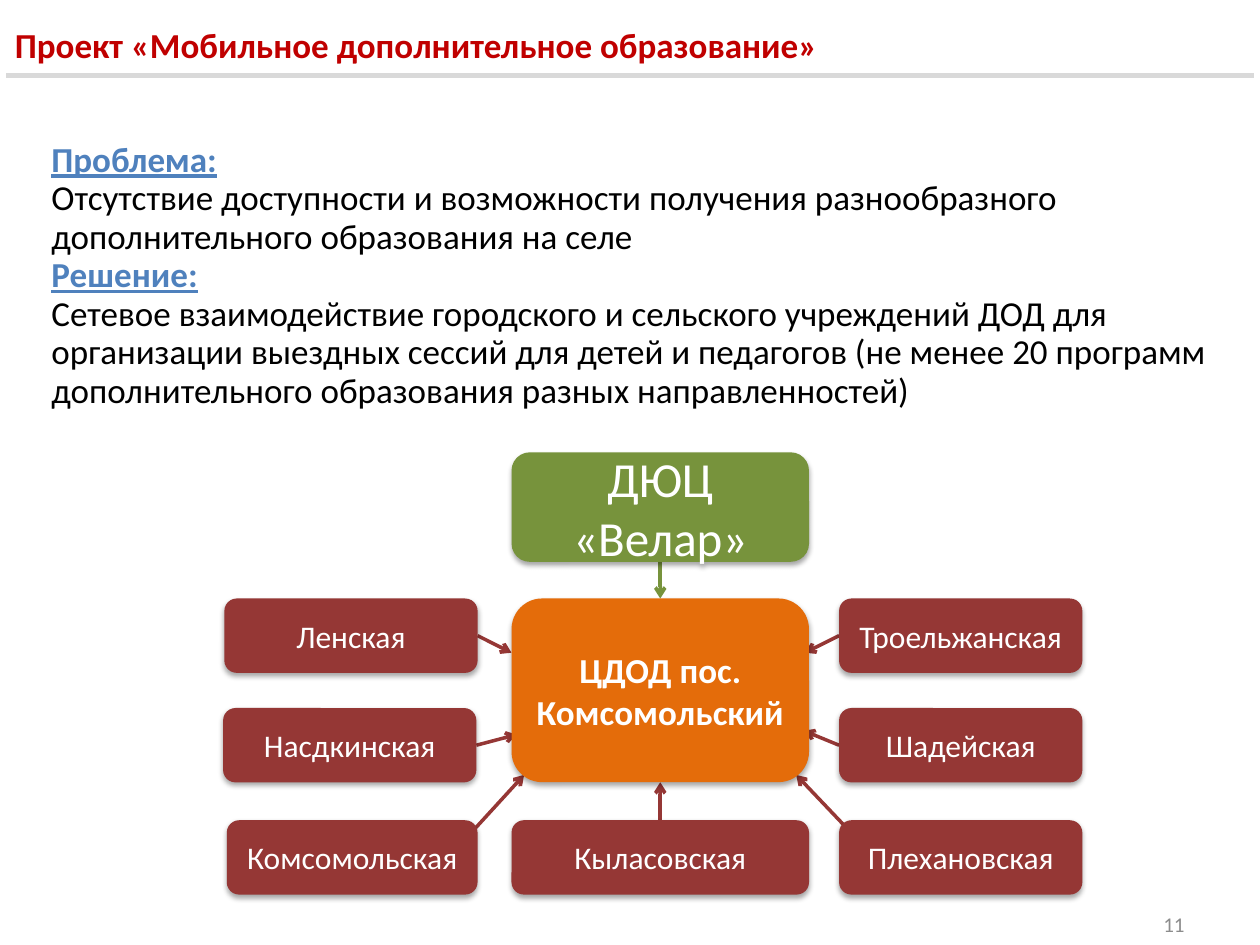
from dataclasses import dataclass

from lxml import etree
from pptx import Presentation
from pptx.dml.color import RGBColor
from pptx.enum.shapes import MSO_CONNECTOR, MSO_SHAPE
from pptx.enum.text import MSO_ANCHOR, PP_ALIGN
from pptx.oxml.ns import qn
from pptx.util import Pt

STRAIGHT = MSO_CONNECTOR.STRAIGHT
ROUNDED = MSO_SHAPE.ROUNDED_RECTANGLE
MIDDLE, TOP_ANCHOR = MSO_ANCHOR.MIDDLE, MSO_ANCHOR.TOP
LEFT_ALIGN, CENTER, RIGHT_ALIGN = PP_ALIGN.LEFT, PP_ALIGN.CENTER, PP_ALIGN.RIGHT
TOP, LEFT, BOTTOM, RIGHT = range(4)


@dataclass(frozen=True)
class Theme:
    font: str = "Calibri"
    title: str = "C00000"
    heading: str = "4F81BD"
    body: str = "000000"
    page: str = "8C8C8C"
    rule: str = "D9D9D9"
    center: str = "77933C"
    hub: str = "E46C0A"
    school: str = "953735"
    on_fill: str = "FFFFFF"
    center_size: int = 28
    main_size: int = 20
    school_size: int = 18
    page_size: int = 12


THEME = Theme()

STATEMENTS = [
    ("Проблема:", True),
    ("Отсутствие доступности и возможности получения разнообразного "
     "дополнительного образования на селе", False),
    ("Решение:", True),
    ("Сетевое взаимодействие городского и сельского учреждений ДОД для "
     "организации выездных сессий для детей и педагогов (не менее 20 программ "
     "дополнительного образования разных направленностей)", False),
]

HUB_LEFT, HUB_WIDTH = 292.3, 170
HUB_MIDDLE = HUB_LEFT + HUB_WIDTH / 2
ROWS = (342, 404.6, 468.7)
RIGHT_LEFT, RIGHT_WIDTH = 479.5, 139
SCHOOL_HEIGHT = 42.5

# name, left, row, width, arrow start, arrow end, side joined to the school
SCHOOLS = [
    ("Троельжанская", RIGHT_LEFT, 0, RIGHT_WIDTH, (480, 365), (460, 373), LEFT),
    ("Шадейская", RIGHT_LEFT, 1, RIGHT_WIDTH, (480, 426), (459.4, 417.6), LEFT),
    ("Плехановская", RIGHT_LEFT, 2, RIGHT_WIDTH, (483, 472.3), (455, 442.8), None),
    ("Кыласовская", HUB_LEFT, 2, HUB_WIDTH, (HUB_MIDDLE, 468.7), (HUB_MIDDLE, 447), TOP),
    ("Комсомольская", 129.6, 2, 143.3, (268.6, 476.6), (299.5, 442.8), None),
    ("Ленская", 128.2, 0, 144.7, (272, 364), (292.3, 373), RIGHT),
    ("Насдкинская", 127.5, 1, 144.7, (272, 428), (295.2, 419.8), RIGHT),
]


def style_text(paragraph, size, color, bold=False, underline=False, align=LEFT_ALIGN):
    paragraph.alignment = align
    for run in paragraph.runs:
        run.font.name = THEME.font
        run.font.size = Pt(size)
        run.font.bold = bold
        run.font.underline = underline
        run.font.color.rgb = RGBColor.from_string(color)


def add_text(slide, box, lines, anchor=MIDDLE):
    frame = slide.shapes.add_textbox(*map(Pt, box)).text_frame
    frame.word_wrap = True
    frame.vertical_anchor = anchor
    frame.text = "\n".join(lines)
    return frame.paragraphs


def add_shadow(node):
    effects = etree.SubElement(node._element.spPr, qn("a:effectLst"))
    shadow = etree.SubElement(effects, qn("a:outerShdw"), blurRad=str(Pt(3.1)),
                              dist=str(Pt(1.8)), dir="5400000", rotWithShape="0")
    color = etree.SubElement(shadow, qn("a:srgbClr"), val="000000")
    etree.SubElement(color, qn("a:alpha"), val="35000")


def add_node(slide, box, label, fill, size, bold=False):
    node = slide.shapes.add_shape(ROUNDED, *map(Pt, box))
    node.fill.solid()
    node.fill.fore_color.rgb = RGBColor.from_string(fill)
    node.line.fill.background()
    add_shadow(node)
    node.text_frame.word_wrap = True
    node.text_frame.vertical_anchor = MIDDLE
    node.text_frame.text = label
    style_text(node.text_frame.paragraphs[0], size, THEME.on_fill, bold, align=CENTER)
    return node


def add_line(slide, start, end, color, width, arrow=False):
    line = slide.shapes.add_connector(STRAIGHT, *map(Pt, (*start, *end)))
    line.line.color.rgb = RGBColor.from_string(color)
    line.line.width = Pt(width)
    if arrow:
        etree.SubElement(line.line._get_or_add_ln(), qn("a:tailEnd"), type="arrow")
    etree.SubElement(line._element.spPr, qn("a:effectLst"))
    return line


def add_network(slide):
    center_arrow = add_line(slide, (HUB_MIDDLE, 321), (HUB_MIDDLE, 342),
                            THEME.center, 2, True)
    school_arrows = [add_line(slide, start, end, THEME.school, 2, True)
                     for *_, start, end, _ in SCHOOLS]

    center = add_node(slide, (HUB_LEFT, 258.5, HUB_WIDTH, 62.6), "ДЮЦ «Велар»",
                      THEME.center, THEME.center_size)
    hub = add_node(slide, (HUB_LEFT, ROWS[0], HUB_WIDTH, 105),
                   "ЦДОД пос. Комсомольский", THEME.hub, THEME.main_size, True)
    center_arrow.begin_connect(center, BOTTOM)
    center_arrow.end_connect(hub, TOP)

    for arrow, (name, left, row, width, _, _, side) in zip(school_arrows, SCHOOLS):
        school = add_node(slide, (left, ROWS[row], width, SCHOOL_HEIGHT), name,
                          THEME.school, THEME.school_size)
        if side is not None:
            arrow.begin_connect(school, side)
        if side == TOP:
            arrow.end_connect(hub, BOTTOM)


def add_statements(slide):
    paragraphs = add_text(slide, (22.3, 77, 674.6, 162.7),
                          [text for text, _ in STATEMENTS], TOP_ANCHOR)
    for paragraph, (_, heading) in zip(paragraphs, STATEMENTS):
        paragraph.line_spacing = Pt(22)
        color = THEME.heading if heading else THEME.body
        style_text(paragraph, THEME.main_size, color, heading, heading)


def main():
    deck = Presentation()
    deck.slide_width, deck.slide_height = Pt(720), Pt(540)
    slide = deck.slides.add_slide(deck.slide_layouts[6])

    title = add_text(slide, (1.4, 1.4, 680.4, 48.2),
                     ["Проект «Мобильное дополнительное образование»"])
    style_text(title[0], THEME.main_size, THEME.title, True)
    page = add_text(slide, (516, 513.4, 168, 28.8), ["11"])
    style_text(page[0], THEME.page_size, THEME.page, align=RIGHT_ALIGN)
    add_statements(slide)
    add_network(slide)
    add_line(slide, (3.6, 43.2), (716.4, 43.2), THEME.rule, 3)

    deck.save("out.pptx")


if __name__ == "__main__":
    main()
